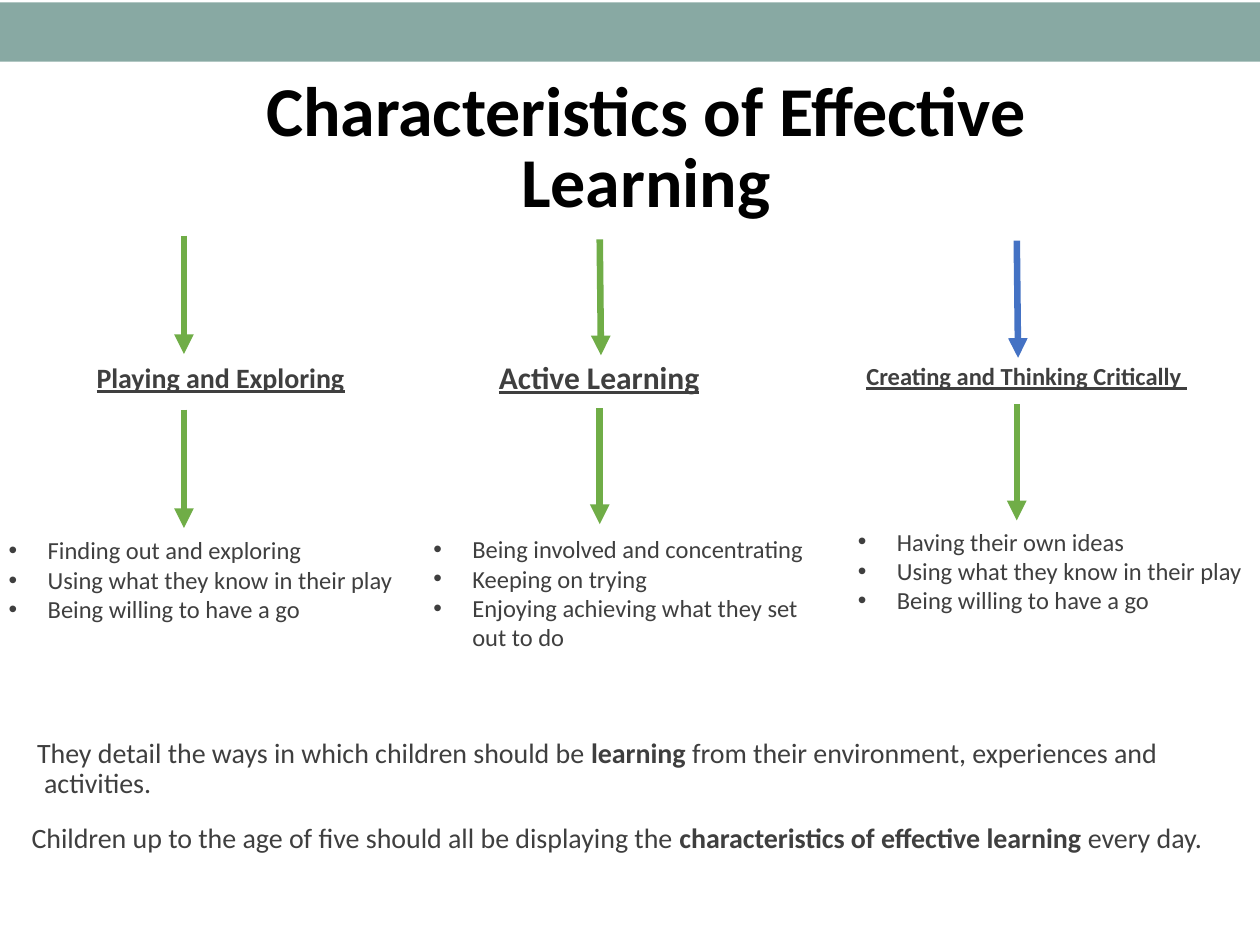
"""Build the Characteristics of Effective Learning slide."""
from dataclasses import dataclass

from lxml.etree import SubElement
from pptx import Presentation
from pptx.dml.color import RGBColor
from pptx.enum.shapes import MSO_CONNECTOR, MSO_SHAPE
from pptx.enum.text import MSO_ANCHOR, MSO_AUTO_SIZE, PP_ALIGN
from pptx.oxml.ns import qn
from pptx.util import Inches, Pt


@dataclass(frozen=True)
class Theme:
    """Colours and type sizes of the slide."""
    font: str = "Calibri"
    black: str = "000000"
    ink: str = "3F3F3F"
    green: str = "70AD47"
    blue: str = "4472C4"
    band: str = "6B948C"
    title: int = 40
    large: int = 18
    body: int = 16
    small: int = 14
    stroke: float = 3.75


def write(para, text, size, color, font, bold=False, under=False):
    """Add a run of text with its format."""
    run = para.add_run()
    run.text = text
    face = run.font
    face.name, face.size = font, Pt(size)
    face.bold, face.underline = bold, under
    face.color.rgb = RGBColor.from_string(color)


def indent(para, left, first):
    """Set the left margin and first line indent."""
    props = para._p.get_or_add_pPr()
    props.set("marL", str(Inches(left)))
    props.set("indent", str(Inches(first)))
    return props


class Page:
    """Hold the theme and slide and draw each kind of element."""

    def __init__(self, slide, theme):
        """Keep the slide and its theme."""
        self.slide, self.theme = slide, theme

    def frame(self, box, inset=0.1, anchor=MSO_ANCHOR.TOP, grow=False):
        """Add a wrapped text box and return its frame."""
        frame = self.slide.shapes.add_textbox(*map(Inches, box)).text_frame
        frame.word_wrap = True
        frame.auto_size = MSO_AUTO_SIZE.SHAPE_TO_FIT_TEXT if grow else MSO_AUTO_SIZE.NONE
        frame.vertical_anchor = anchor
        frame.margin_left = frame.margin_right = Inches(inset)
        frame.margin_top = frame.margin_bottom = Inches(0.05)
        return frame

    def band(self, box):
        """Draw the translucent band along the top."""
        shape = self.slide.shapes.add_shape(MSO_SHAPE.RECTANGLE, *map(Inches, box))
        shape.shadow.inherit = False
        shape.fill.solid()
        shape.fill.fore_color.rgb = RGBColor.from_string(self.theme.band)
        shape.line.fill.background()
        tint = shape._element.spPr.find(qn("a:solidFill"))[0]
        SubElement(tint, qn("a:alpha"), val="80000")

    def title(self, text, box):
        """Write the slide title."""
        look = self.theme
        para = self.frame(box, anchor=MSO_ANCHOR.BOTTOM).paragraphs[0]
        para.alignment, para.line_spacing = PP_ALIGN.CENTER, 0.85
        write(para, text, look.title, look.black, look.font, bold=True)

    def head(self, text, box, size):
        """Write an underlined column heading."""
        look = self.theme
        para = self.frame(box, grow=True).paragraphs[0]
        para.alignment = PP_ALIGN.CENTER
        write(para, text, size, look.ink, look.font, bold=True, under=True)

    def bullets(self, items, box):
        """Write a bulleted list."""
        look = self.theme
        frame = self.frame(box, grow=True)
        for num, item in enumerate(items):
            para = frame.add_paragraph() if num else frame.paragraphs[0]
            props = indent(para, 0.31, -0.31)
            color = SubElement(props, qn("a:buClr"))
            SubElement(color, qn("a:srgbClr"), val=look.ink)
            SubElement(props, qn("a:buFont"), typeface="Arial")
            SubElement(props, qn("a:buChar"), char="•")
            write(para, item, look.small, look.ink, look.font)

    def notes(self, paras, box):
        """Write closing paragraphs of text, size and bold parts."""
        look = self.theme
        frame = self.frame(box, inset=0)
        for num, parts in enumerate(paras):
            para = frame.add_paragraph() if num else frame.paragraphs[0]
            indent(para, 0.1, -0.1)
            para.line_spacing = 0.9
            if num:
                para.space_before = Pt(14)
            for text, size, bold in parts:
                write(para, text, size, look.ink, look.font, bold=bold)

    def arrow(self, start, end, color):
        """Draw a line that ends in a triangle."""
        line = self.slide.shapes.add_connector(
            MSO_CONNECTOR.STRAIGHT, *map(Inches, (*start, *end)))
        line.line.width = Pt(self.theme.stroke)
        line.line.color.rgb = RGBColor.from_string(color)
        SubElement(line.line._get_or_add_ln(), qn("a:tailEnd"), type="triangle")
        SubElement(line._element.spPr, qn("a:effectLst"))


def main():
    """Build and save the slide."""
    deck = Presentation()
    deck.slide_width, deck.slide_height = Inches(10), Inches(7.5)
    look = Theme()
    page = Page(deck.slides.add_slide(deck.slide_layouts[6]), look)

    page.title("Characteristics of Effective Learning", (1, 0.22, 8.25, 1.59))
    size = look.body
    page.notes([
        [(" ", look.small, False),
         ("They detail the ways in which children should be ", size, False),
         ("learning", size, True),
         (" from their environment, experiences and activities.", size, False)],
        [("Children up to the age of five should all be displaying the ", size, False),
         ("characteristics of effective learning", size, True),
         (" every day.", size, False)],
    ], (0.25, 5.82, 9.75, 3.89))

    columns = [
        ("Playing and Exploring", look.body, (0.09, 2.81, 3.32, 0.37),
         ["Finding out and exploring", "Using what they know in their play",
          "Being willing to have a go"], (-0.03, 4.2, 3.78, 1.35),
         [((1.46, 1.87), (1.46, 2.81), look.green),
          ((1.46, 3.25), (1.46, 4.19), look.green)]),
        ("Active Learning", look.large, (3.31, 2.79, 2.89, 0.4),
         ["Being involved and concentrating", "Keeping on trying",
          "Enjoying achieving what they set out to do"], (3.34, 4.19, 3.39, 1.58),
         [((4.76, 1.9), (4.77, 2.82), look.green),
          ((4.76, 3.24), (4.76, 4.16), look.green)]),
        ("Creating and Thinking Critically ", look.small, (6.12, 2.82, 4.06, 0.34),
         ["Having their own ideas", "Using what they know in their play",
          "Being willing to have a go"], (6.71, 4.13, 3.39, 1.82),
         [((8.07, 1.91), (8.08, 2.84), look.blue),
          ((8.07, 3.21), (8.07, 4.13), look.green)]),
    ]
    for name, size, top, items, box, arrows in columns:
        page.head(name, top, size)
        page.bullets(items, box)
        for start, end, color in arrows:
            page.arrow(start, end, color)

    page.band((0, 0.02, 10, 0.47))
    deck.save("out.pptx")


if __name__ == "__main__":
    main()
